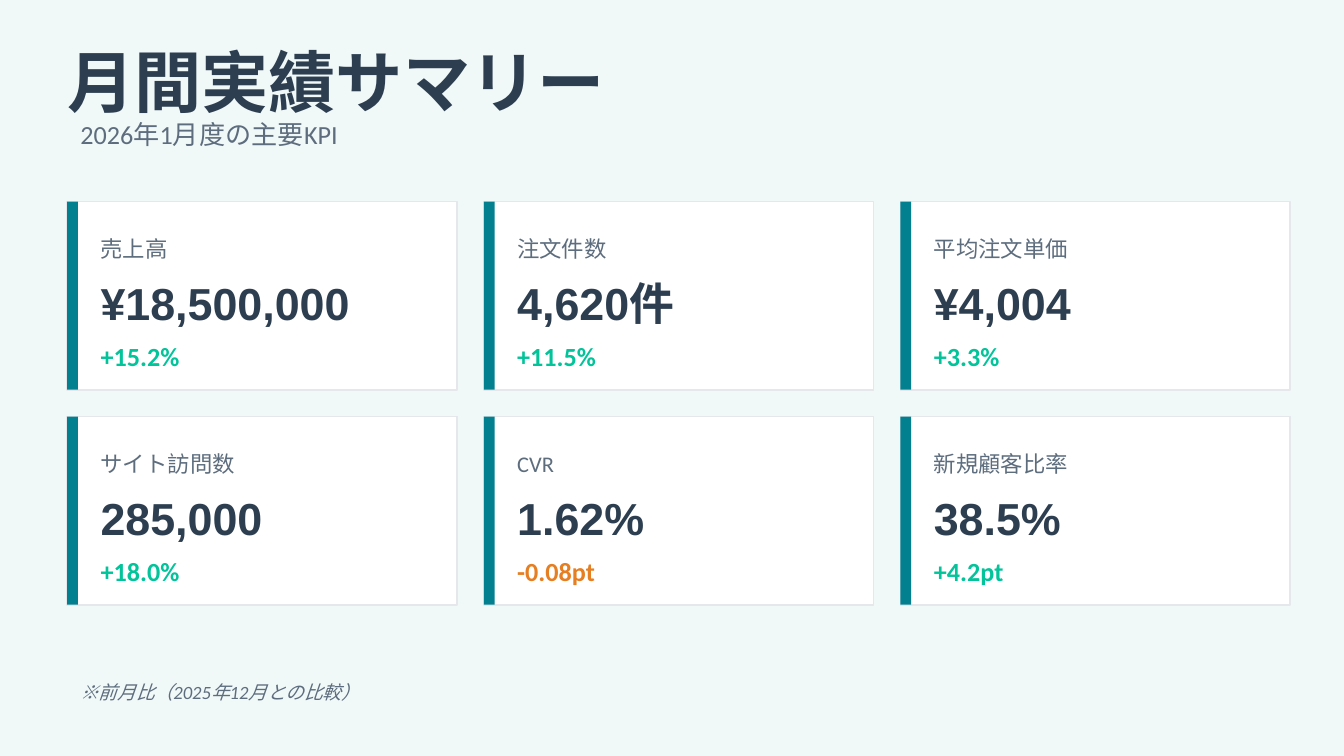
from typing import Any, NamedTuple

import pptx
import pptx.dml.color
import pptx.enum.shapes
import pptx.enum.text
import pptx.util

RGBColor = pptx.dml.color.RGBColor

PX = 914400 // 200  # EMU per px, at 200 px to the inch

MINT = RGBColor(0xF0, 0xF8, 0xF8)
NAVY = RGBColor(0x2C, 0x3E, 0x50)
SLATE = RGBColor(0x5D, 0x6D, 0x7E)
TEAL = RGBColor(0x02, 0x80, 0x90)
GREEN = RGBColor(0x02, 0xC3, 0x9A)
ORANGE = RGBColor(0xE6, 0x7E, 0x22)
WHITE = RGBColor(0xFF, 0xFF, 0xFF)
BORDER = RGBColor(0xE5, 0xE7, 0xEB)

MARGIN, CONTENT_WIDTH = 100, 1800
CARD_WIDTH, CARD_HEIGHT, CARD_GAP = 580, 280, 40
CARDS_TOP, COLUMNS = 300, 3
ACCENT_WIDTH, TEXT_INSET, TEXT_WIDTH = 16, 30, 520


class Area(NamedTuple):
    left: int
    top: int
    width: int
    height: int

    def emu(self) -> list[int]:
        return [length * PX for length in self]


class Metric(NamedTuple):
    label: str
    value: str
    change: str
    change_color: RGBColor = GREEN


METRICS = [
    Metric("売上高", "¥18,500,000", "+15.2%"),
    Metric("注文件数", "4,620件", "+11.5%"),
    Metric("平均注文単価", "¥4,004", "+3.3%"),
    Metric("サイト訪問数", "285,000", "+18.0%"),
    Metric("CVR", "1.62%", "-0.08pt", ORANGE),
    Metric("新規顧客比率", "38.5%", "+4.2pt"),
]


def add_text(page: Any, area: Area, text: str, *, size: int, color: RGBColor = SLATE,
             font: str = "Calibri", bold: bool = False, italic: bool = False,
             margins: bool = True) -> None:
    frame = page.shapes.add_textbox(*area.emu()).text_frame
    frame.word_wrap = True
    frame.vertical_anchor = pptx.enum.text.MSO_ANCHOR.MIDDLE
    if not margins:
        frame.margin_left = frame.margin_right = 0
        frame.margin_top = frame.margin_bottom = 0
    span = frame.paragraphs[0].add_run()
    span.text = text
    span.font.name = font
    span.font.size = pptx.util.Pt(size)
    span.font.bold = bold
    span.font.italic = italic
    span.font.color.rgb = color


def add_rectangle(page: Any, area: Area, fill: RGBColor,
                  line: RGBColor | None = None) -> None:
    box = page.shapes.add_shape(pptx.enum.shapes.MSO_SHAPE.RECTANGLE, *area.emu())
    box.shadow.inherit = False
    box.fill.solid()
    box.fill.fore_color.rgb = fill
    if line is None:
        box.line.fill.background()
    else:
        box.line.color.rgb = line
        box.line.width = pptx.util.Pt(1)


def add_card(page: Any, left: int, top: int, metric: Metric) -> None:
    add_rectangle(page, Area(left, top, CARD_WIDTH, CARD_HEIGHT), WHITE, BORDER)
    add_rectangle(page, Area(left, top, ACCENT_WIDTH, CARD_HEIGHT), TEAL)
    text_left = left + TEXT_INSET
    add_text(page, Area(text_left, top + 40, TEXT_WIDTH, 60), metric.label, size=12)
    add_text(page, Area(text_left, top + 100, TEXT_WIDTH, 100), metric.value,
             size=24, color=NAVY, font="Arial", bold=True)
    add_text(page, Area(text_left, top + 200, TEXT_WIDTH, 60), metric.change,
             size=14, color=metric.change_color, bold=True)


def main() -> None:
    deck = pptx.Presentation()
    deck.slide_width, deck.slide_height = 2000 * PX, 1125 * PX
    page = deck.slides.add_slide(deck.slide_layouts[6])
    page.background.fill.solid()
    page.background.fill.fore_color.rgb = MINT

    # Heading
    add_text(page, Area(MARGIN, 60, CONTENT_WIDTH, 120), "月間実績サマリー",
             size=36, color=NAVY, font="Montserrat", bold=True, margins=False)
    add_text(page, Area(MARGIN, 170, CONTENT_WIDTH, 60), "2026年1月度の主要KPI", size=14)

    # Metric cards, filled row by row
    for index, metric in enumerate(METRICS):
        row, column = divmod(index, COLUMNS)
        add_card(page, MARGIN + column * (CARD_WIDTH + CARD_GAP),
                 CARDS_TOP + row * (CARD_HEIGHT + CARD_GAP), metric)

    # Footnote
    add_text(page, Area(MARGIN, 1000, CONTENT_WIDTH, 60),
             "※前月比（2025年12月との比較）", size=10, italic=True)

    deck.save("out.pptx")


if __name__ == "__main__":
    main()
